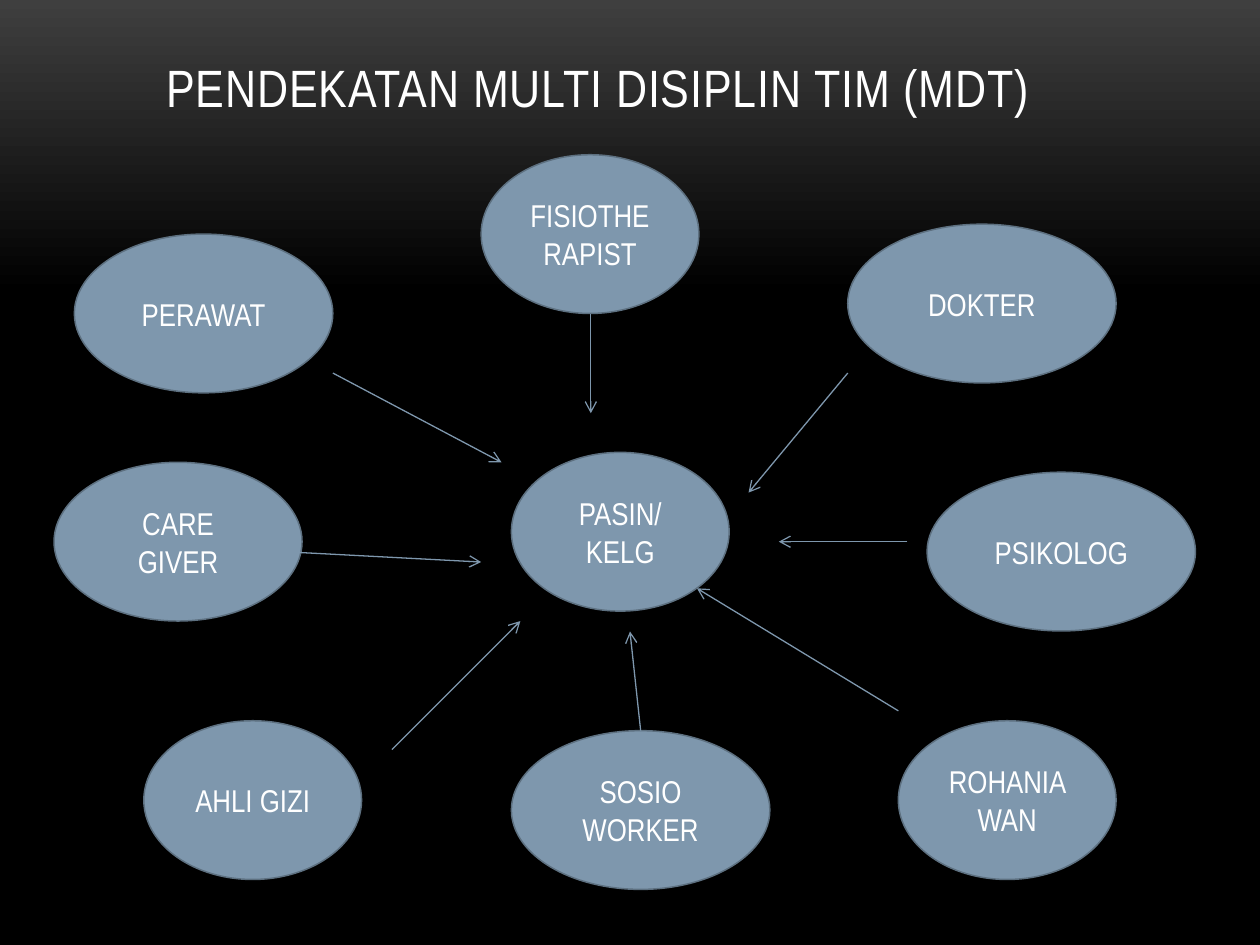
from dataclasses import dataclass
from typing import Optional

from lxml.etree import SubElement
from pptx import Presentation
from pptx.dml.color import RGBColor as RGB
from pptx.enum.shapes import MSO_CONNECTOR as CONN, MSO_SHAPE as SHAPE
from pptx.enum.text import MSO_ANCHOR as ANCHOR, MSO_AUTO_SIZE as FIT, PP_ALIGN as ALIGN
from pptx.oxml.ns import qn
from pptx.util import Cm, Pt


@dataclass(frozen=True)
class Theme:
    font: str = "Arial Narrow"
    title_size: float = 30
    body_size: float = 18
    text: RGB = RGB(0xFF, 0xFF, 0xFF)
    fill: RGB = RGB(0x7E, 0x97, 0xAD)
    outline: RGB = RGB(0x5D, 0x70, 0x80)
    glow: RGB = RGB(0x3F, 0x3F, 0x3F)
    back: RGB = RGB(0, 0, 0)


@dataclass(frozen=True)
class Role:
    """An ellipse; lengths in centimetres."""
    name: str
    left: float
    top: float
    width: float


@dataclass(frozen=True)
class Arrow:
    """An arrow; lengths in centimetres. source is joined at its top."""
    x1: float
    y1: float
    x2: float
    y2: float
    source: Optional[str] = None


THEME = Theme()
ROLE_HEIGHT = 3.2

ROLES = [
    Role("PASIN/ KELG", 10.31, 9.12, 4.39),
    Role("PERAWAT", 1.5, 4.72, 5.21),
    Role("FISIOTHERAPIST", 9.7, 3.12, 4.39),
    Role("DOKTER", 17.09, 4.52, 5.41),
    Role("PSIKOLOG", 18.69, 9.52, 5.41),
    Role("CARE GIVER", 1.09, 9.32, 5),
    Role("AHLI GIZI", 2.9, 14.53, 4.39),
    Role("SOSIO WORKER", 10.31, 14.73, 5.21),
    Role("ROHANIAWAN", 18.11, 14.53, 4.39),
]

ARROWS = [
    Arrow(6.71, 7.52, 10.11, 9.32),
    Arrow(5.89, 11.13, 9.7, 11.33),
    Arrow(7.9, 15.11, 10.49, 12.52),
    Arrow(12.91, 14.73, 12.7, 12.73, source="SOSIO WORKER"),
    Arrow(11.91, 6.32, 11.91, 8.33),
    Arrow(18.11, 14.33, 14.05, 11.86),
    Arrow(17.09, 7.52, 15.09, 9.93),
    Arrow(18.29, 10.92, 15.7, 10.92),
]


def write(sp, text: str, *, size: float, align=ALIGN.CENTER,
          anchor=ANCHOR.MIDDLE, spacing: float = 0) -> None:
    """Put formatted text in a shape; spacing is in points."""
    tf = sp.text_frame
    tf.word_wrap = True
    tf.auto_size = FIT.NONE
    tf.vertical_anchor = anchor
    p = tf.paragraphs[0]
    p.alignment = align
    r = p.add_run()
    r.text = text
    r.font.name = THEME.font
    r.font.size = Pt(size)
    r.font.color.rgb = THEME.text
    if spacing:
        r.font._element.set("spc", str(round(spacing * 100)))


def paint_background(s) -> None:
    fill = s.background.fill
    fill.gradient()
    fill.gradient_angle = 270
    stops = [(0, THEME.glow), (0.31, THEME.back)]
    for stop, (position, color) in zip(fill.gradient_stops, stops):
        stop.position = position
        stop.color.rgb = color


def add_title(s, text: str) -> None:
    sp = s.shapes.title
    sp.left, sp.top, sp.width, sp.height = Cm(3.1), Cm(0), Cm(20.4), Cm(2.51)
    write(sp, text, size=THEME.title_size, align=ALIGN.LEFT,
          anchor=ANCHOR.BOTTOM, spacing=0.5)


def add_role(s, role: Role):
    sp = s.shapes.add_shape(SHAPE.OVAL, Cm(role.left), Cm(role.top),
                            Cm(role.width), Cm(ROLE_HEIGHT))
    sp.shadow.inherit = False
    sp.fill.solid()
    sp.fill.fore_color.rgb = THEME.fill
    sp.line.color.rgb = THEME.outline
    sp.line.width = Pt(0.85)
    write(sp, role.name, size=THEME.body_size)
    return sp


def add_arrow(s, arrow: Arrow, ovals: dict) -> None:
    line = s.shapes.add_connector(CONN.STRAIGHT, Cm(arrow.x1), Cm(arrow.y1),
                                  Cm(arrow.x2), Cm(arrow.y2))
    if arrow.source:
        line.begin_connect(ovals[arrow.source], 0)
    line.line.color.rgb = THEME.fill
    line.line.width = Pt(0.75)
    SubElement(line.line._get_or_add_ln(), qn("a:tailEnd"), type="arrow")
    SubElement(line._element.spPr, qn("a:effectLst"))


def main() -> None:
    prs = Presentation()
    prs.slide_width, prs.slide_height = Cm(25.4), Cm(19.05)
    s = prs.slides.add_slide(prs.slide_layouts[5])

    # Background and title
    paint_background(s)
    add_title(s, "PENDEKATAN MULTI DISIPLIN TIM (MDT)")

    # Patient in the middle, team around it
    ovals = {role.name: add_role(s, role) for role in ROLES}

    # Arrows from the team to the patient
    for arrow in ARROWS:
        add_arrow(s, arrow, ovals)

    prs.save("out.pptx")


if __name__ == "__main__":
    main()
